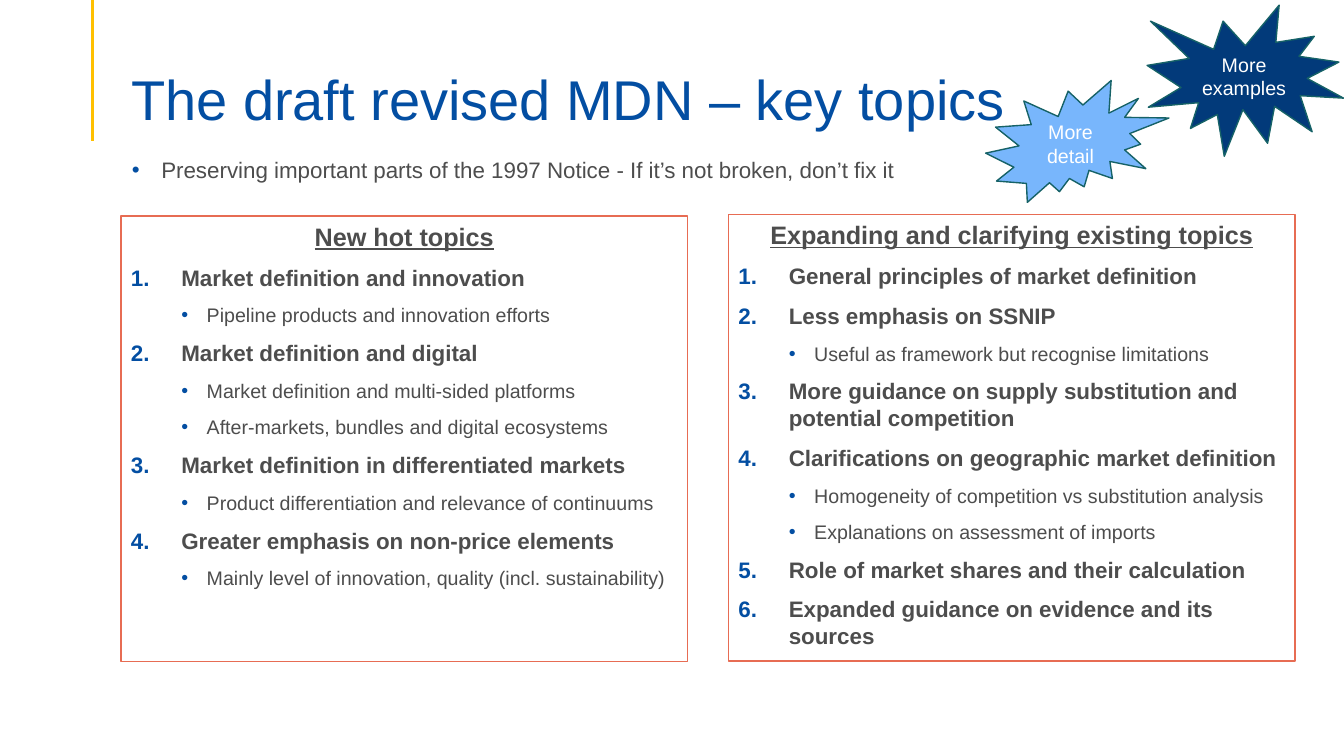
from dataclasses import dataclass

from lxml.etree import SubElement
from pptx import Presentation
from pptx.dml.color import RGBColor
from pptx.enum.shapes import MSO_CONNECTOR, MSO_SHAPE as Preset
from pptx.enum.text import MSO_ANCHOR as Anchor, MSO_AUTO_SIZE as AutoSize, PP_ALIGN as Align
from pptx.oxml.ns import qn
from pptx.util import Cm, Pt

FONT = "Arial"
BLUE = RGBColor(0x03, 0x4E, 0xA2)
NAVY = RGBColor(0x02, 0x3A, 0x7A)
SKY = RGBColor(0x78, 0xB6, 0xFC)
TEAL = RGBColor(0x16, 0x62, 0x67)
CORAL = RGBColor(0xE7, 0x6C, 0x53)
YELLOW = RGBColor(0xFF, 0xC0, 0x00)
GREY = RGBColor(0x4D, 0x4D, 0x4D)
WHITE = RGBColor(0xFF, 0xFF, 0xFF)


@dataclass(frozen=True)
class Topic:
    title: str
    details: tuple[str, ...] = ()


@dataclass(frozen=True)
class Panel:
    heading: str
    left: float
    top: float
    height: float
    topics: tuple[Topic, ...]


@dataclass(frozen=True)
class Burst:
    text: str
    preset: Preset
    frame: tuple[float, float, float, float]
    fill: RGBColor


PANEL_WIDTH = 14.28
PANELS = (
    Panel("New hot topics", 3.05, 5.44, 11.23, (
        Topic("Market definition and innovation",
              ("Pipeline products and innovation efforts",)),
        Topic("Market definition and digital",
              ("Market definition and multi-sided platforms",
               "After-markets, bundles and digital ecosystems")),
        Topic("Market definition in differentiated markets",
              ("Product differentiation and relevance of continuums",)),
        Topic("Greater emphasis on non-price elements",
              ("Mainly level of innovation, quality (incl. sustainability)",)),
    )),
    Panel("Expanding and clarifying existing topics", 18.36, 5.41, 11.25, (
        Topic("General principles of market definition"),
        Topic("Less emphasis on SSNIP",
              ("Useful as framework but recognise limitations",)),
        Topic("More guidance on supply substitution and potential competition"),
        Topic("Clarifications on geographic market definition",
              ("Homogeneity of competition vs substitution analysis",
               "Explanations on assessment of imports")),
        Topic("Role of market shares and their calculation"),
        Topic("Expanded guidance on evidence and its sources"),
    )),
)
BURSTS = (
    Burst("More examples", Preset.EXPLOSION1, (28.91, 0.13, 4.95, 3.81), NAVY),
    Burst("More detail", Preset.EXPLOSION2, (24.84, 2.03, 4.62, 3.07), SKY),
)


def add_marker(para, numbered: bool, margin: float, hanging: float) -> None:
    """Give the paragraph a blue number or bullet with a hanging indent."""
    props = para._p.get_or_add_pPr()
    props.set("marL", str(Cm(margin)))
    props.set("indent", str(-Cm(hanging)))
    color = SubElement(props, qn("a:buClr"))
    SubElement(color, qn("a:srgbClr"), val=str(BLUE))
    SubElement(props, qn("a:buFont"), typeface=FONT)
    if numbered:
        SubElement(props, qn("a:buAutoNum"), type="arabicPeriod")
    else:
        SubElement(props, qn("a:buChar"), char="•")


def write(para, text: str, *, size: float, color: RGBColor = GREY, bold: bool = False,
          underline: bool = False, align: Align = Align.LEFT, before: float = 0,
          after: float = 0) -> None:
    para.alignment = align
    para.space_before, para.space_after = Pt(before), Pt(after)
    para.line_spacing = 1.0
    span = para.add_run()
    span.text = text
    span.font.name, span.font.size = FONT, Pt(size)
    span.font.bold, span.font.underline = bold, underline
    span.font.color.rgb = color


def prepare(box, anchor: Anchor):
    """Set up the text frame and return its first paragraph."""
    frame = box.text_frame
    frame.word_wrap = True
    frame.auto_size = AutoSize.NONE
    frame.vertical_anchor = anchor
    return frame.paragraphs[0]


def place(box, left: float, top: float, width: float, height: float) -> None:
    box.left, box.top, box.width, box.height = Cm(left), Cm(top), Cm(width), Cm(height)


def add_box(page, preset: Preset, frame: tuple[float, float, float, float],
            fill: RGBColor, line: RGBColor):
    box = page.shapes.add_shape(preset, *map(Cm, frame))
    box.shadow.inherit = False
    box.fill.solid()
    box.fill.fore_color.rgb = fill
    box.line.color.rgb = line
    box.line.width = Pt(1)
    return box


def add_panel(page, panel: Panel) -> None:
    box = add_box(page, Preset.RECTANGLE,
                  (panel.left, panel.top, PANEL_WIDTH, panel.height), WHITE, CORAL)
    write(prepare(box, Anchor.TOP), panel.heading, size=18, bold=True, underline=True,
          align=Align.CENTER, after=3)
    for topic in panel.topics:
        para = box.text_frame.add_paragraph()
        add_marker(para, True, 1.27, 1.27)
        write(para, topic.title, size=16, bold=True, before=6, after=3)
        for detail in topic.details:
            para = box.text_frame.add_paragraph()
            para.level = 1
            add_marker(para, False, 1.91, 0.64)
            write(para, detail, size=14, before=6, after=3)


def add_burst(page, burst: Burst) -> None:
    box = add_box(page, burst.preset, burst.frame, burst.fill, TEAL)
    write(prepare(box, Anchor.MIDDLE), burst.text, size=14, color=WHITE, align=Align.CENTER)


def main() -> None:
    deck = Presentation()
    deck.slide_width, deck.slide_height = Cm(33.87), Cm(19.05)
    page = deck.slides.add_slide(deck.slide_layouts[1])

    # Accent line beside the title
    accent = page.shapes.add_connector(MSO_CONNECTOR.STRAIGHT, Cm(2.34), 0, Cm(2.34), Cm(3.55))
    accent.line.color.rgb = YELLOW
    accent.line.width = Pt(2.25)
    SubElement(accent._element.spPr, qn("a:effectLst"))

    # Title and lead statement
    title, lead = page.shapes.title, page.placeholders[1]
    place(title, 3.05, 1.5, 30.3, 2.0)
    write(prepare(title, Anchor.TOP), "The draft revised MDN – key topics", size=40, color=BLUE)
    place(lead, 3.05, 3.81, 21.5, 1.2)
    para = prepare(lead, Anchor.TOP)
    add_marker(para, False, 0.76, 0.74)
    write(para, "Preserving important parts of the 1997 Notice - If it’s not broken, don’t fix it",
          size=16)

    # Topic panels and callout bursts
    for panel in PANELS:
        add_panel(page, panel)
    for burst in BURSTS:
        add_burst(page, burst)

    deck.save("out.pptx")


if __name__ == "__main__":
    main()
